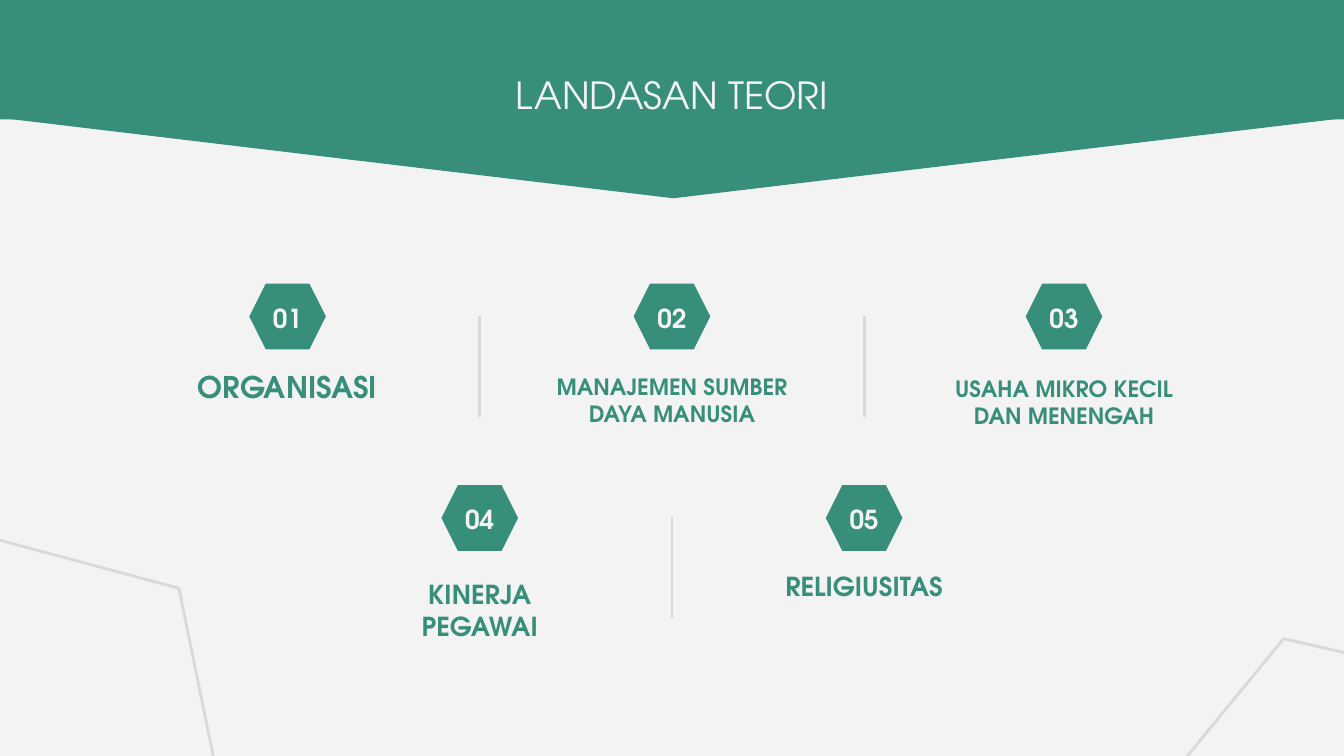
from lxml.etree import SubElement
from pptx import Presentation
from pptx.dml.color import RGBColor
from pptx.enum.shapes import MSO_CONNECTOR as Connector, MSO_SHAPE as Shape
from pptx.enum.text import MSO_ANCHOR as Anchor, PP_ALIGN as Align
from pptx.oxml.ns import qn
from pptx.util import Inches, Pt

COLORS = {"green": "378E7B", "light": "F3F3F3", "gray": "D9D9D9"}
FONT = "TeX Gyre Adventor"
WIDTH = 10
HEIGHT = WIDTH * 9 / 16
CENTER = WIDTH / 2
COLUMN = 1.43
ROWS = (2.11, 3.61)
BADGE = (0.57, 0.49)
NUMBER = (0.82, 0.33)
LABEL_HEIGHT = 0.63
DIVIDER_DROP, DIVIDER_LENGTH = 0.24, 0.75

TITLE = "LANDASAN TEORI"
TOPICS = [
    {"text": "ORGANISASI", "column": -2, "row": 0, "size": 16, "width": 1.75, "drop": 0.77},
    {"text": "MANAJEMEN SUMBER DAYA MANUSIA", "column": 0, "row": 0, "size": 12, "width": 1.99, "drop": 0.87},
    {"text": "USAHA MIKRO KECIL DAN MENENGAH", "column": 2.04, "row": 0, "size": 12, "width": 2.01, "drop": 0.88},
    {"text": "KINERJA PEGAWAI", "column": -1, "row": 1, "size": 14, "width": 1.75, "drop": 0.93},
    {"text": "RELIGIUSITAS", "column": 1, "row": 1, "size": 14, "width": 1.75, "drop": 0.75},
]
DIVIDERS = [(-1, 0), (1, 0), (0, 1)]
BANNER = [
    (Shape.ISOSCELES_TRIANGLE, (-0.01, 0.87, 10.04, 0.6), 180, "green", 0.75),
    (Shape.RECTANGLE, (-0.01, -0.04, 10.04, 0.93), 0, None, 0),
]
OUTLINES = [((-1.56, 4.08, 3.23, 2.53), 15), ((8.29, 5.05, 3.23, 2.53), 309.4)]


def color(name):
    return RGBColor.from_string(COLORS[name])


def centered(x, y, width, height):
    return x - width / 2, y - height / 2, width, height


def add_shape(slide, kind, box, fill=None, line=None, weight=0, rotation=0):
    shape = slide.shapes.add_shape(kind, *map(Inches, box))
    shape.shadow.inherit = False
    shape.rotation = rotation
    if fill:
        shape.fill.solid()
        shape.fill.fore_color.rgb = color(fill)
    else:
        shape.fill.background()
    if line:
        shape.line.color.rgb = color(line)
        shape.line.width = Pt(weight)
    else:
        shape.line.fill.background()


def add_text(slide, text, box, size, ink, bold=True, anchor=Anchor.MIDDLE):
    frame = slide.shapes.add_textbox(*map(Inches, box)).text_frame
    margins = {f"margin_{side}": Inches(0.1) for side in ("left", "top", "right", "bottom")}
    for name, value in {"word_wrap": True, "vertical_anchor": anchor, **margins}.items():
        setattr(frame, name, value)
    paragraph = frame.paragraphs[0]
    paragraph.alignment = Align.CENTER
    run = paragraph.add_run()
    run.text = text
    for name, value in {"name": FONT, "size": Pt(size), "bold": bold}.items():
        setattr(run.font, name, value)
    run.font.color.rgb = color(ink)


def add_divider(slide, x, y):
    ends = (x, y, x, y + DIVIDER_LENGTH)
    divider = slide.shapes.add_connector(Connector.STRAIGHT, *map(Inches, ends))
    divider.line.color.rgb = color("gray")
    divider.line.width = Pt(1.5)
    SubElement(divider.element.spPr, qn("a:effectLst"))


def main():
    presentation = Presentation()
    presentation.slide_width, presentation.slide_height = Inches(WIDTH), Inches(HEIGHT)
    slide = presentation.slides.add_slide(presentation.slide_layouts[6])
    slide.background.fill.solid()
    slide.background.fill.fore_color.rgb = color("light")

    for kind, box, rotation, line, weight in BANNER:
        add_shape(slide, kind, box, "green", line, weight, rotation)
    add_text(slide, TITLE, centered(CENTER, 0.81, 3.26, 0.75), 20, "light", False, Anchor.TOP)

    for column, row in DIVIDERS:
        add_divider(slide, CENTER + column * COLUMN, ROWS[row] + DIVIDER_DROP)

    for number, topic in enumerate(TOPICS, 1):
        x, top = CENTER + topic["column"] * COLUMN, ROWS[topic["row"]]
        middle = top + BADGE[1] / 2
        add_shape(slide, Shape.HEXAGON, centered(x, middle, *BADGE), "green")
        add_text(slide, f"{number:02}", centered(x, middle + 0.01, *NUMBER), 14, "light")
        label = centered(x, top + topic["drop"], topic["width"], LABEL_HEIGHT)
        add_text(slide, topic["text"], label, topic["size"], "green")

    for box, rotation in OUTLINES:
        add_shape(slide, Shape.HEXAGON, box, line="gray", weight=1.5, rotation=rotation)

    presentation.save("out.pptx")


if __name__ == "__main__":
    main()
